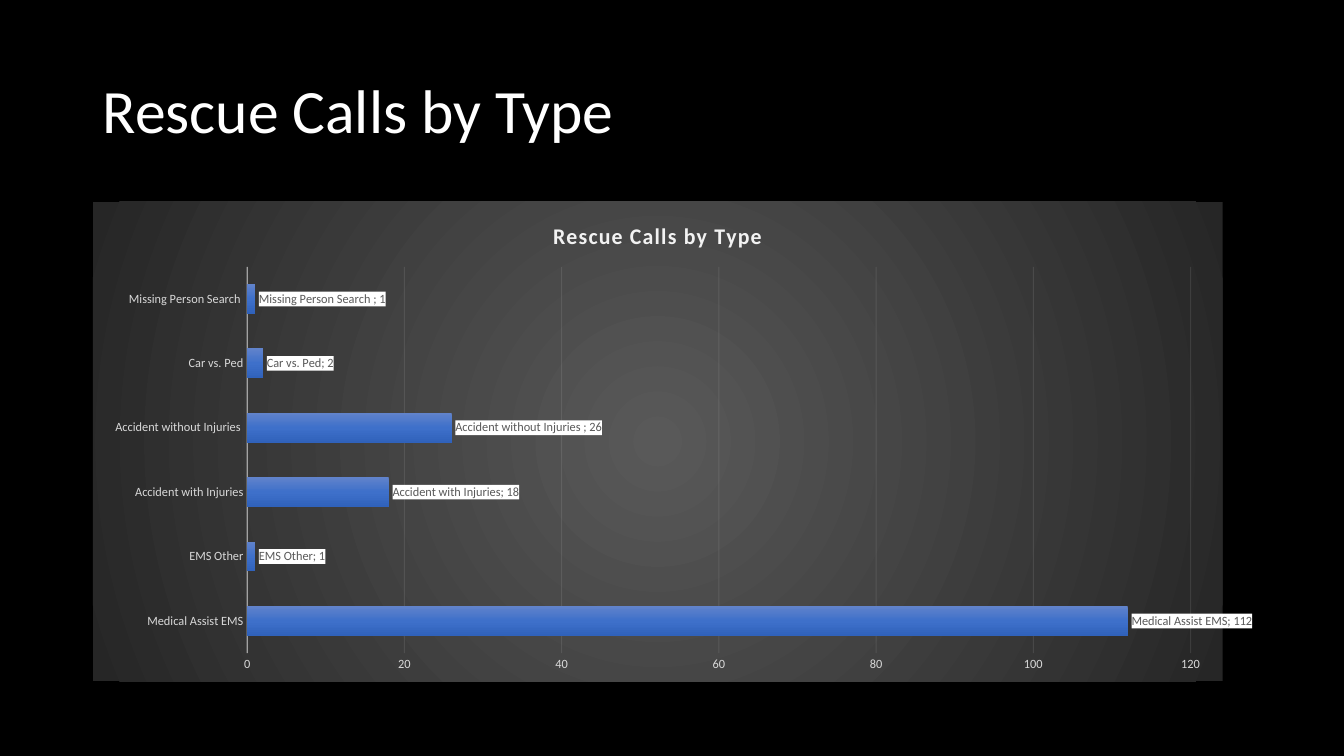
"""Builds the Rescue Calls by Type slide with a bar chart on a black background."""
from lxml import etree
from pptx import Presentation
from pptx.chart.data import CategoryChartData
from pptx.dml.color import RGBColor
from pptx.enum.chart import XL_CHART_TYPE as CT, XL_LABEL_POSITION as LP, XL_TICK_MARK as TM
from pptx.enum.text import MSO_ANCHOR
from pptx.oxml import parse_xml
from pptx.oxml.ns import nsdecls, qn
from pptx.util import Inches, Pt

TITLE = "Rescue Calls by Type"
CALLS = [
    ("Medical Assist EMS", 112),
    ("EMS Other", 1),
    ("Accident with Injuries", 18),
    ("Accident without Injuries ", 26),
    ("Car vs. Ped", 2),
    ("Missing Person Search ", 1),
]


def style(font, size, color, bold=False):
    font.name, font.size, font.bold = "Calibri", Pt(size), bold
    font.color.rgb = RGBColor.from_string(color)


def shape_props(fill):
    return parse_xml(f'<c:spPr {nsdecls("c", "a")}>{fill}<a:ln><a:noFill/></a:ln></c:spPr>')


prs = Presentation()
prs.slide_width, prs.slide_height = Inches(13.33), Inches(7.5)
s = prs.slides.add_slide(prs.slide_layouts[6])
s.background.fill.solid()
s.background.fill.fore_color.rgb = RGBColor.from_string("000000")
left, width = Inches(0.92), Inches(11.5)

tf = s.shapes.add_textbox(left, Inches(0.4), width, Inches(1.45)).text_frame
tf.word_wrap = True
tf.vertical_anchor = MSO_ANCHOR.MIDDLE
p = tf.paragraphs[0]
p.text = TITLE
p.line_spacing = 0.9
style(p.font, 44, "FFFFFF")

data = CategoryChartData()
data.categories = [name for name, count in CALLS]
data.add_series(TITLE, [count for name, count in CALLS])
chart = s.shapes.add_chart(CT.BAR_CLUSTERED, left, Inches(2), width, Inches(4.76), data).chart
style(chart.font, 10, "FFFFFF")
chart.has_legend = False
chart.has_title = True
p = chart.chart_title.text_frame.paragraphs[0]
r = p.add_run()
r.text = TITLE
style(r.font, 16, "F2F2F2", True)
r.font._element.set("spc", "100")
chart.chart_title.include_in_layout = False

cat, val = chart.category_axis, chart.value_axis
for axis in (cat, val):
    axis.major_tick_mark = axis.minor_tick_mark = TM.NONE
    style(axis.tick_labels.font, 9, "D9D9D9")
val.minimum_scale, val.maximum_scale, val.major_unit = 0, 120, 20
val.format.line.fill.background()
val.has_major_gridlines = True
for line, points, opacity in ((cat.format.line, 1, 54), (val.major_gridlines.format.line, 0.75, 10)):
    line.width = Pt(points)
    line.color.rgb = RGBColor.from_string("F2F2F2")
    clr = line.fill._xPr.find(".//" + qn("a:srgbClr"))
    etree.SubElement(clr, qn("a:alpha"), val=str(opacity * 1000))

plot = chart.plots[0]
plot.gap_width, plot.overlap, plot.vary_by_categories = 115, -20, False
ser = plot.series[0]
ser.invert_if_negative = False
labels = ser.data_labels
style(labels.font, 9, "595959")
labels.position = LP.OUTSIDE_END
labels.show_value = labels.show_category_name = True
white = '<a:solidFill><a:srgbClr val="FFFFFF"/></a:solidFill>'
labels._element.find(qn("c:txPr")).addprevious(shape_props(white))
separator = parse_xml(f'<c:separator {nsdecls("c")}>; </c:separator>')
labels._element.find(qn("c:showBubbleSize")).addnext(separator)

bar_props = ser._element.get_or_add_spPr()
plate_props = shape_props("")
chart._chartSpace.find(qn("c:chart")).addnext(plate_props)
linear = '<a:lin ang="5400000" scaled="0"/>'
radial = '<a:path path="circle"><a:fillToRect l="50000" t="50000" r="50000" b="50000"/></a:path>'
for props, stops, direction in (
    (bar_props, {0: "6183CB", 50: "3E70CA", 100: "3062BB"}, linear),
    (plate_props, {0: "595959", 100: "262626"}, radial),
):
    gs = "".join(f'<a:gs pos="{pos * 1000}"><a:srgbClr val="{c}"/></a:gs>' for pos, c in stops.items())
    props.insert(0, parse_xml(f'<a:gradFill {nsdecls("a")}><a:gsLst>{gs}</a:gsLst>{direction}</a:gradFill>'))

prs.save("out.pptx")
